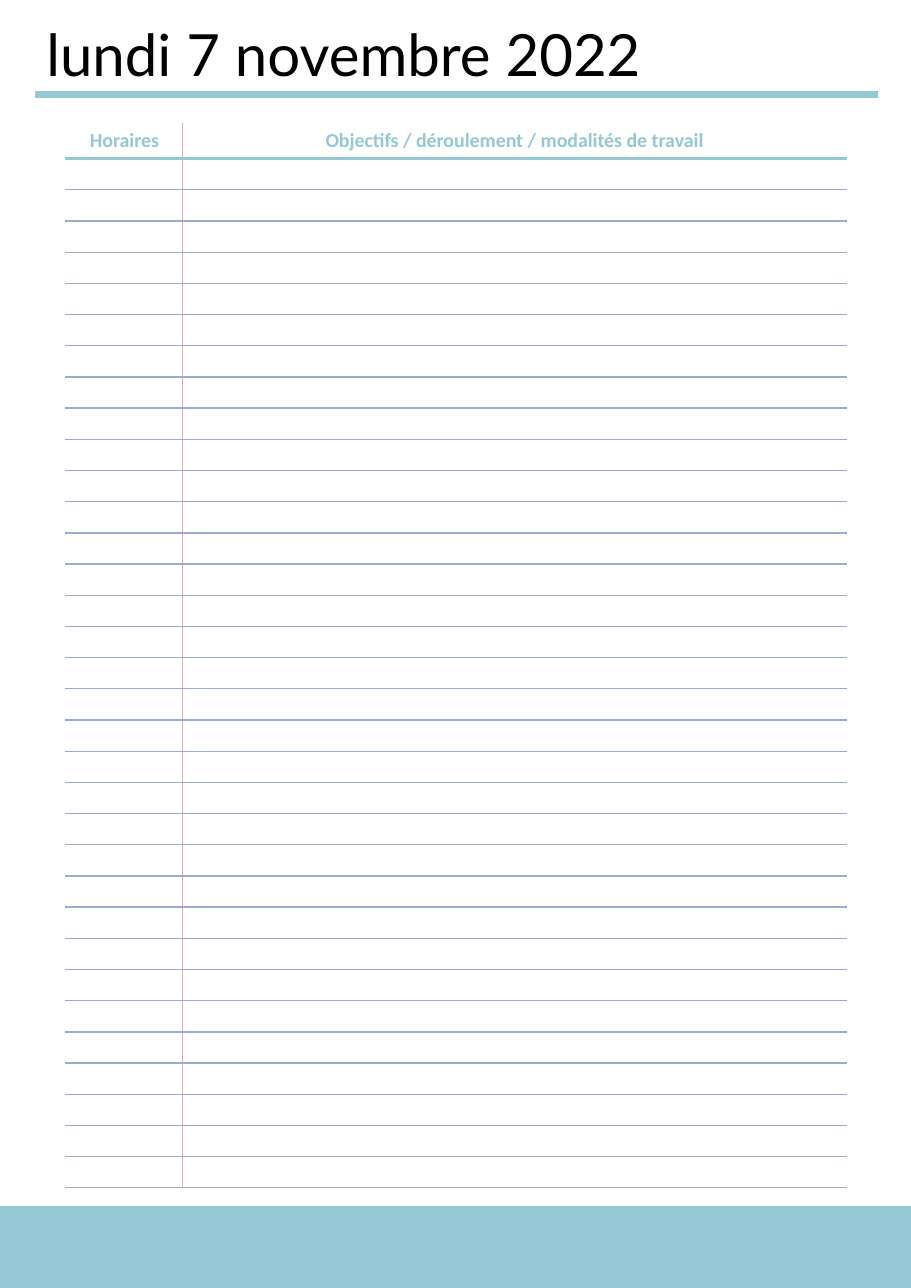
from lxml.etree import SubElement
from pptx import Presentation
from pptx.dml.color import RGBColor
from pptx.enum.shapes import MSO_CONNECTOR, MSO_SHAPE
from pptx.enum.text import MSO_ANCHOR, MSO_AUTO_SIZE, PP_ALIGN
from pptx.oxml.ns import qn
from pptx.util import Pt

PX = 9144  # 100 px to the inch
TEAL = RGBColor(0x94, 0xC8, 0xD5)
BLUE = RGBColor(0x9A, 0xAD, 0xCD)
PINK = RGBColor(0xDC, 0xA9, 0xCC)
WHITE = RGBColor(0xFF, 0xFF, 0xFF)
BLACK = RGBColor(0, 0, 0)

WIDE, HIGH = 827, 1169
HEADS = ["Horaires", "Objectifs / déroulement / modalités de travail"]
COLS = [106, 602]
LINES = 33
HEAD, FULL = 32, 967


def border(cell, side, color, width):
    props = cell._tc.get_or_add_tcPr()
    line = SubElement(props, qn("a:ln" + side), w=str(Pt(width)))
    fill = SubElement(line, qn("a:solidFill"))
    SubElement(fill, qn("a:srgbClr"), val=str(color))


def style(font, name, size, color, bold):
    font.name, font.size, font.bold = name, Pt(size), bold
    font.color.rgb = color


deck = Presentation()
deck.slide_width, deck.slide_height = WIDE * PX, HIGH * PX
slide = deck.slides.add_slide(deck.slide_layouts[5])
shapes = slide.shapes

# Rule under the date
rule = shapes.add_connector(
    MSO_CONNECTOR.STRAIGHT, 32 * PX, 86 * PX, 797 * PX, 86 * PX)
rule.line.color.rgb = TEAL
rule.line.width = Pt(4.75)
SubElement(rule._element.spPr, qn("a:effectLst"))

# Band at the foot
band = shapes.add_shape(
    MSO_SHAPE.RECTANGLE, 0, 1095 * PX, WIDE * PX, 74 * PX)
band.shadow.inherit = False
band.fill.solid()
band.fill.fore_color.rgb = TEAL
band.line.color.rgb = TEAL
band.line.width = Pt(1)

# Date
title = shapes.title
title.left, title.top = 32 * PX, 12 * PX
title.width, title.height = 764 * PX, 74 * PX
frame = title.text_frame
frame.text = "lundi 7 novembre 2022"
frame.word_wrap = True
frame.auto_size = MSO_AUTO_SIZE.SHAPE_TO_FIT_TEXT
frame.vertical_anchor = MSO_ANCHOR.TOP
date = frame.paragraphs[0]
date.alignment = PP_ALIGN.LEFT
date.line_spacing = 1.0
style(date.runs[0].font, "Lato", 38, BLACK, False)

# Ruled table
table = shapes.add_table(
    LINES + 1, 2, 60 * PX, 112 * PX, sum(COLS) * PX, FULL * PX).table
table.first_row = table.horz_banding = False
for col, width in zip(table.columns, COLS):
    col.width = width * PX
for n, row in enumerate(table.rows):
    row.height = HEAD * PX if n == 0 else (FULL - HEAD) * PX // LINES
    above = [(WHITE, 1), (TEAL, 2.25)][n] if n < 2 else (BLUE, 1)
    below = (TEAL, 2.25) if n == 0 else (BLUE, 1)
    for c, cell in enumerate(row.cells):
        border(cell, "L", PINK if c else WHITE, 1)
        border(cell, "R", WHITE if c else PINK, 1)
        border(cell, "T", *above)
        border(cell, "B", *below)
        cell.fill.solid()
        cell.fill.fore_color.rgb = WHITE
        para = cell.text_frame.paragraphs[0]
        if n == 0:
            para.text = HEADS[c]
            para.alignment = PP_ALIGN.CENTER
            style(para.runs[0].font, "Calibri", 13, TEAL, True)
        else:
            # Small empty text keeps the line height
            cell.margin_top = cell.margin_bottom = 0
            SubElement(para._p, qn("a:endParaRPr"), sz="1000")

deck.save("out.pptx")
